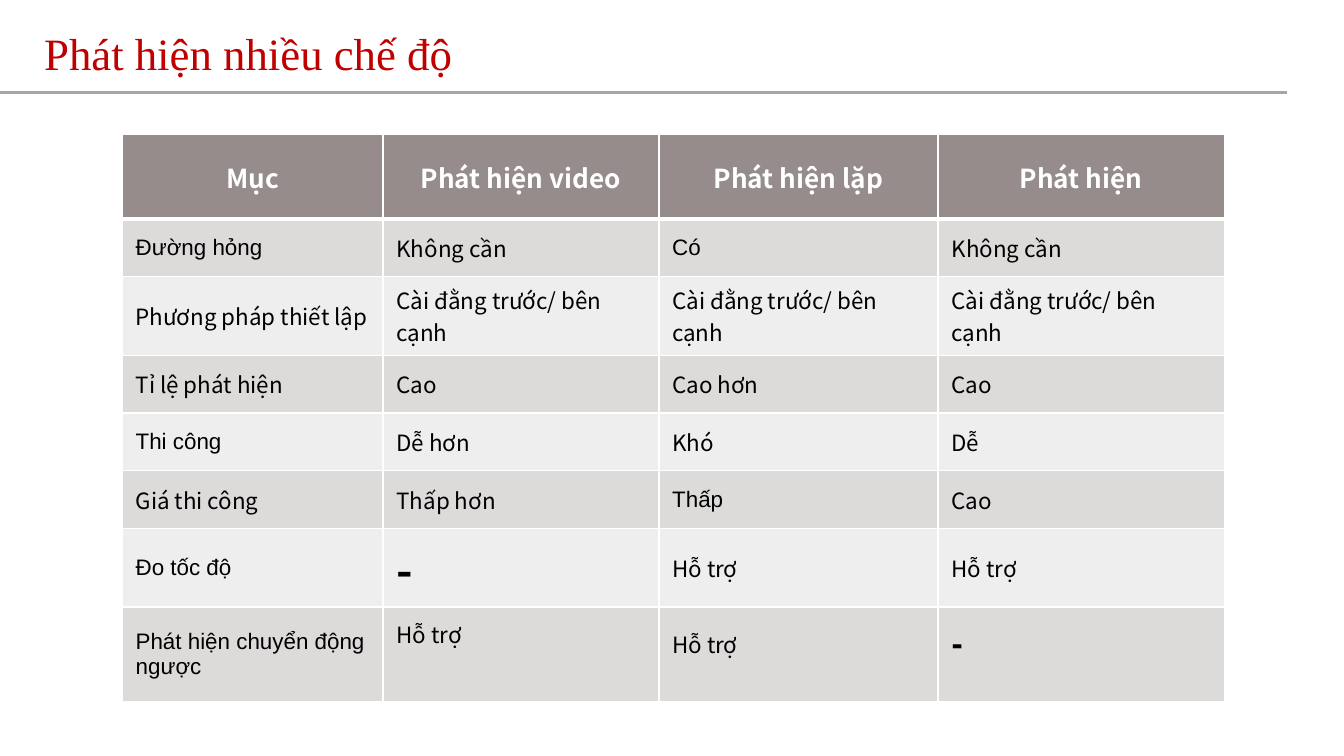
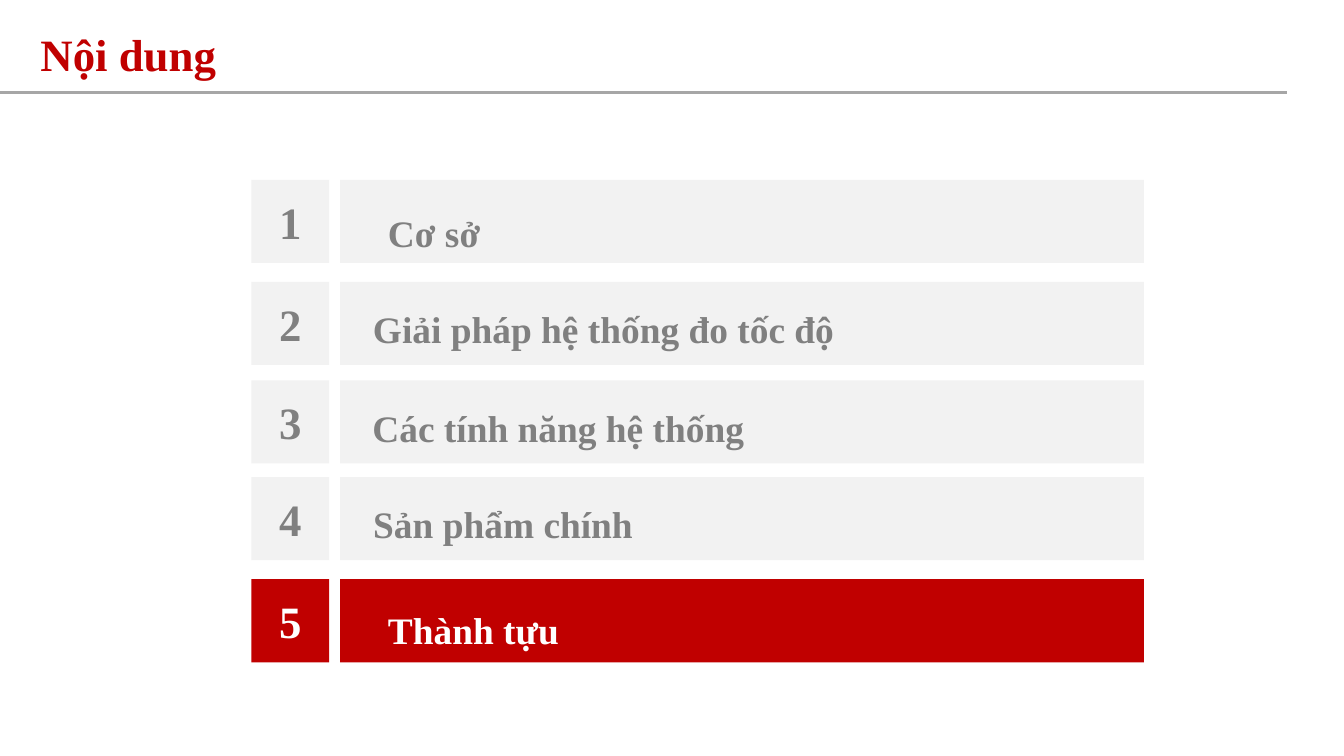
from dataclasses import dataclass

from lxml.etree import SubElement
from pptx import Presentation
from pptx.dml.color import RGBColor
from pptx.enum.shapes import MSO_CONNECTOR, MSO_SHAPE
from pptx.enum.text import MSO_ANCHOR as Anchor, MSO_AUTO_SIZE as AutoSize, PP_ALIGN as Align
from pptx.oxml import parse_xml
from pptx.oxml.ns import nsdecls, qn
from pptx.util import Cm, Pt

# Shared look
RED, WHITE, BLACK = "C00000", "FFFFFF", "000000"
RULE_GREY, PALE, MUTED = "A6A6A6", "F2F2F2", "808080"
HEADER_FILL, BAND_FILLS = "968C8C", ("DDDADA", "EFEEEE")
SERIF, SANS, NOTO = "Times New Roman", "Arial", "Noto Sans CJK SC"


@dataclass(frozen=True)
class Box:
    left: float
    top: float
    width: float
    height: float

    def lengths(self) -> tuple:
        return Cm(self.left), Cm(self.top), Cm(self.width), Cm(self.height)


@dataclass(frozen=True)
class Entry:
    """A cell of the comparison; lift is extra bottom margin in cm."""
    text: str
    font: str = NOTO
    size: float = 12
    bold: bool = False
    lift: float = 0


@dataclass(frozen=True)
class Topic:
    """A row of the agenda; label gives the place of its wording."""
    title: str
    top: float
    label: Box
    active: bool = False


def colour(hex_code: str) -> RGBColor:
    return RGBColor.from_string(hex_code)


def write(frame, text: str, size: float, ink: str, font: str = SERIF,
          bold: bool = False, align=Align.LEFT):
    frame.text = text
    paragraph = frame.paragraphs[0]
    paragraph.alignment = align
    for run in paragraph.runs:
        run.font.size, run.font.name, run.font.bold = Pt(size), font, bold
        run.font.color.rgb = colour(ink)
    return paragraph


def add_titled_slide(deck, title: str, box: Box, bold: bool, anchor):
    slide = deck.slides.add_slide(deck.slide_layouts[5])
    # Grey rule under the title
    rule = slide.shapes.add_connector(MSO_CONNECTOR.STRAIGHT, 0, Cm(1.75), Cm(24.33), Cm(1.75))
    rule.line.color.rgb = colour(RULE_GREY)
    rule.line.width = Pt(1.5)
    SubElement(rule._element.spPr, qn("a:effectLst"))
    # Title
    heading = slide.shapes.title
    heading.left, heading.top, heading.width, heading.height = box.lengths()
    frame = heading.text_frame
    frame.auto_size, frame.word_wrap = AutoSize.NONE, True
    frame.vertical_anchor = anchor
    write(frame, title, 24, RED, bold=bold)
    return slide


# Comparison table
def sans(text: str) -> Entry:
    return Entry(text, SANS)


MOUNTING = Entry("Cài đằng trước/ bên cạnh")
HEADINGS = ("Mục", "Phát hiện video", "Phát hiện lặp", "Phát hiện")
COMPARISON = (
    (sans("Đường hỏng"), Entry("Không cần"), sans("Có"), Entry("Không cần")),
    (Entry("Phương pháp thiết lập"), MOUNTING, MOUNTING, MOUNTING),
    (Entry("Tỉ lệ phát hiện"), Entry("Cao"), Entry("Cao hơn"), Entry("Cao")),
    (sans("Thi công"), Entry("Dễ hơn"), Entry("Khó"), Entry("Dễ")),
    (Entry("Giá thi công"), Entry("Thấp hơn"), sans("Thấp"), Entry("Cao")),
    (sans("Đo tốc độ"), Entry("-", size=24, bold=True), Entry("Hỗ trợ"), Entry("Hỗ trợ")),
    (sans("Phát hiện chuyển động ngược"), Entry("Hỗ trợ", lift=0.8),
     Entry("Hỗ trợ", lift=0.4), Entry("-", SANS, 18, True, 0.4)),
)
COLUMN_WIDTHS = (4.93, 5.21, 5.28, 5.41)
ROW_HEIGHTS = (1.6, 1.09, 1.35, 1.09, 1.09, 1.09, 1.09, 1.8)


def set_borders(cell, top: float, bottom: float) -> None:
    properties = cell._tc.get_or_add_tcPr()
    for place, (side, width) in enumerate((("L", 1), ("R", 1), ("T", top), ("B", bottom))):
        properties.insert(place, parse_xml(
            f'<a:ln{side} {nsdecls("a")} w="{Pt(width)}"><a:solidFill>'
            f'<a:srgbClr val="{WHITE}"/></a:solidFill></a:ln{side}>'))


def fill_cell(cell, entry: Entry, row: int) -> None:
    is_header = row == 0
    cell.fill.solid()
    cell.fill.fore_color.rgb = colour(HEADER_FILL if is_header else BAND_FILLS[(row - 1) % 2])
    cell.vertical_anchor = Anchor.MIDDLE
    cell.margin_bottom = Cm(0.13 + entry.lift)
    write(cell.text_frame, entry.text, entry.size, WHITE if is_header else BLACK,
          entry.font, entry.bold, Align.CENTER if is_header else Align.LEFT)
    set_borders(cell, top=3 if row == 1 else 1, bottom=3 if is_header else 1)


def build_comparison(deck) -> None:
    slide = add_titled_slide(deck, "Phát hiện nhiều chế độ", Box(0.58, 0.36, 17.5, 1.3),
                             False, Anchor.TOP)
    indent = slide.shapes.title.text_frame.paragraphs[0]._p.get_or_add_pPr()
    indent.set("marL", str(Cm(0.79)))
    indent.set("indent", str(-Cm(0.79)))

    header = tuple(Entry(text, size=14, bold=True) for text in HEADINGS)
    rows = (header, *COMPARISON)
    place = Box(2.31, 2.54, sum(COLUMN_WIDTHS), sum(ROW_HEIGHTS))
    grid = slide.shapes.add_table(len(rows), len(header), *place.lengths()).table
    grid.horz_banding = False
    for column, width in zip(grid.columns, COLUMN_WIDTHS):
        column.width = Cm(width)
    for grid_row, height in zip(grid.rows, ROW_HEIGHTS):
        grid_row.height = Cm(height)
    for row, entries in enumerate(rows):
        for column, entry in enumerate(entries):
            fill_cell(grid.cell(row, column), entry, row)


# Agenda
TOPICS = (
    Topic("Cơ sở", 3.4, Box(7.06, 3.63, 2.29, 1.22)),
    Topic("Giải pháp hệ thống đo tốc độ", 5.33, Box(6.76, 5.46, 9.3, 1.32)),
    Topic("Các tính năng hệ thống", 7.19, Box(6.76, 7.32, 7.59, 1.32)),
    Topic("Sản phẩm chính", 9.02, Box(6.78, 9.14, 5.46, 1.32)),
    Topic("Thành tựu", 10.95, Box(7.06, 11.15, 3.78, 1.22), active=True),
)


def add_panel(slide, box: Box, fill: str):
    panel = slide.shapes.add_shape(MSO_SHAPE.RECTANGLE, *box.lengths())
    panel.shadow.inherit = False
    panel.fill.solid()
    panel.fill.fore_color.rgb = colour(fill)
    panel.line.fill.background()
    return panel


def add_topic(slide, number: int, topic: Topic) -> None:
    fill, ink = (RED, WHITE) if topic.active else (PALE, MUTED)
    badge = add_panel(slide, Box(4.75, topic.top, 1.47, 1.57), fill)
    badge.text_frame.vertical_anchor = Anchor.MIDDLE
    write(badge.text_frame, str(number), 24, ink, bold=True, align=Align.CENTER)
    add_panel(slide, Box(6.43, topic.top, 15.19, 1.57), fill)
    label = slide.shapes.add_textbox(*topic.label.lengths()).text_frame
    label.word_wrap, label.auto_size = False, AutoSize.SHAPE_TO_FIT_TEXT
    write(label, topic.title, 20, ink, bold=True, align=Align.CENTER).line_spacing = 1.25


def build_agenda(deck) -> None:
    slide = add_titled_slide(deck, "Nội dung", Box(0.51, 0.48, 11.48, 1.07),
                             True, Anchor.MIDDLE)
    for number, topic in enumerate(TOPICS, start=1):
        add_topic(slide, number, topic)


def main() -> None:
    deck = Presentation()
    deck.slide_width, deck.slide_height = Cm(25.4), Cm(14.29)
    build_comparison(deck)
    build_agenda(deck)
    deck.save("out.pptx")


if __name__ == "__main__":
    main()
